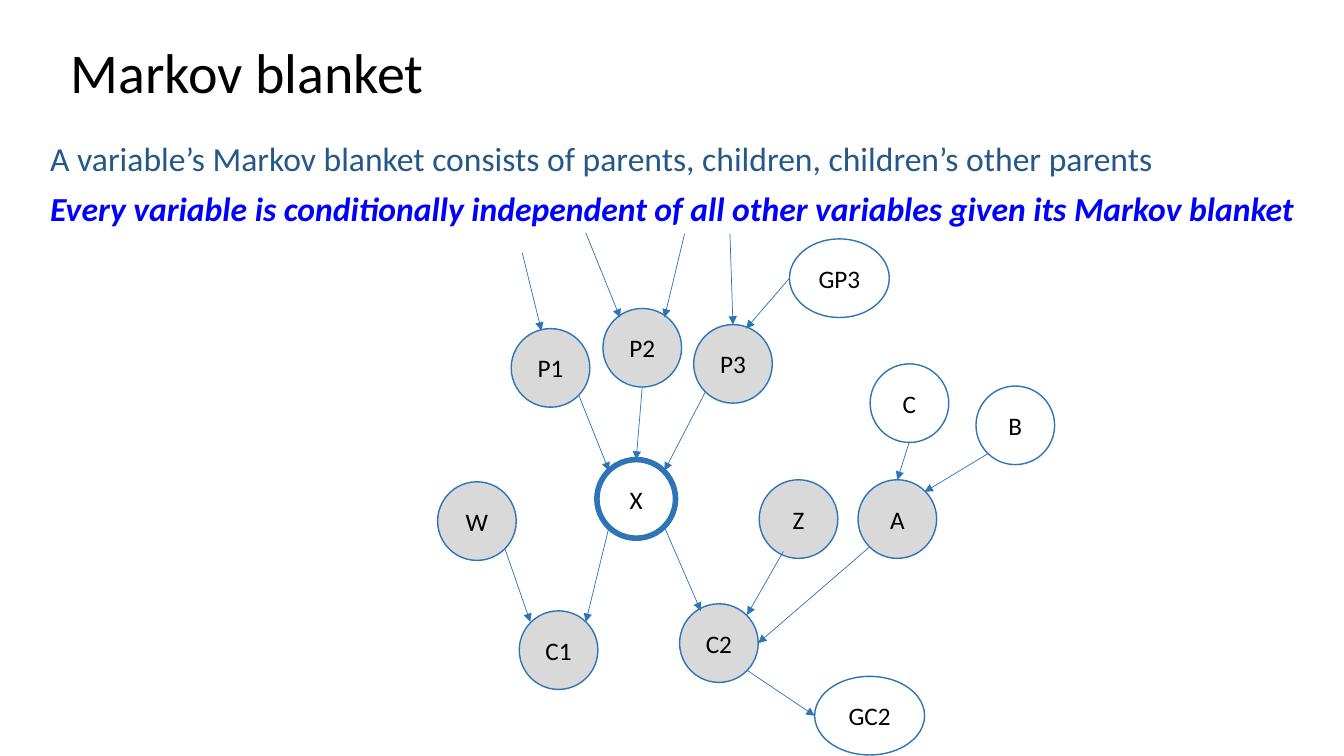
from dataclasses import dataclass

from lxml.etree import SubElement
from pptx import Presentation
from pptx.dml.color import RGBColor
from pptx.enum.shapes import MSO_CONNECTOR as Connector, MSO_SHAPE as Preset
from pptx.enum.text import MSO_ANCHOR as Anchor, PP_ALIGN as Align
from pptx.oxml.ns import qn
from pptx.slide import Slide
from pptx.text.text import _Paragraph as Paragraph
from pptx.util import Emu, Pt

EMU_PER_PX = 9144
DIAMETER = 78


@dataclass(frozen=True)
class Theme:
    font: str = "Calibri"
    ink: str = "000000"
    definition: str = "235888"
    emphasis: str = "0000FF"
    outline: str = "2E75B5"
    blanket: str = "D9D9D9"
    outside: str = "FFFFFF"
    title_size: int = 40
    statement_size: int = 24
    node_size: int = 18
    query_width: float = 4
    node_width: float = 1
    edge_width: float = 0.5


THEME = Theme()


@dataclass(frozen=True)
class Variable:
    label: str
    left: int
    top: int
    width: int = DIAMETER
    in_blanket: bool = False
    is_query: bool = False


@dataclass(frozen=True)
class Edge:
    x1: int
    y1: int
    x2: int
    y2: int


@dataclass(frozen=True)
class Statement:
    wording: str
    color: str
    stressed: bool = False


STATEMENTS = (
    Statement(
        "A variable’s Markov blanket consists of parents, children, children’s other parents",
        THEME.definition,
    ),
    Statement(
        "Every variable is conditionally independent of all other variables given its Markov blanket",
        THEME.emphasis,
        stressed=True,
    ),
)

VARIABLES = (
    Variable("X", 592, 456, is_query=True),
    Variable("P1", 507, 326, in_blanket=True),
    Variable("P2", 598, 306, in_blanket=True),
    Variable("P3", 688, 322, in_blanket=True),
    Variable("C1", 515, 606, in_blanket=True),
    Variable("C2", 674, 599, in_blanket=True),
    Variable("W", 434, 478, in_blanket=True),
    Variable("Z", 753, 476, in_blanket=True),
    Variable("A", 851, 476, in_blanket=True),
    Variable("B", 968, 383),
    Variable("C", 863, 361),
    Variable("GP3", 783, 237, width=99),
    Variable("GC2", 808, 671, width=109),
)

INTO_PARENTS = (
    Edge(518, 251, 537, 328),
    Edge(581, 231, 615, 315),
    Edge(679, 232, 659, 315),
    Edge(724, 232, 727, 322),
    Edge(783, 276, 740, 326),
)
PARENTS_TO_X = (
    Edge(574, 392, 604, 467),
    Edge(637, 384, 631, 456),
    Edge(700, 388, 659, 467),
)
INTO_CHILDREN = (
    Edge(604, 523, 581, 617),
    Edge(659, 523, 695, 606),
    Edge(501, 545, 526, 617),
    Edge(777, 547, 741, 610),
    Edge(862, 543, 752, 638),
)
BEYOND_BLANKET = (
    Edge(980, 450, 917, 488),
    Edge(902, 438, 890, 476),
    Edge(741, 665, 808, 710),
)


def px(length: int) -> Emu:
    return Emu(length * EMU_PER_PX)


def add_run(paragraph: Paragraph, wording: str, size: int, color: str, stressed: bool = False) -> None:
    run = paragraph.add_run()
    run.text = wording
    run.font.name = THEME.font
    run.font.size = Pt(size)
    run.font.color.rgb = RGBColor.from_string(color)
    run.font.bold = stressed
    run.font.italic = stressed


def set_title(slide: Slide, wording: str) -> None:
    title = slide.shapes.title
    title.left, title.top, title.width, title.height = map(px, (60, 40, 1150, 69))
    title.text_frame.vertical_anchor = Anchor.MIDDLE
    paragraph = title.text_frame.paragraphs[0]
    paragraph.alignment = Align.LEFT
    paragraph.line_spacing = 0.9
    add_run(paragraph, wording, THEME.title_size, THEME.ink)


def add_statements(slide: Slide, statements: tuple[Statement, ...]) -> None:
    frame = slide.shapes.add_textbox(px(40), px(136), px(1293), px(122)).text_frame
    frame.word_wrap = True
    for index, statement in enumerate(statements):
        paragraph = frame.add_paragraph() if index else frame.paragraphs[0]
        paragraph.line_spacing = 0.9
        paragraph.space_before = Pt(10)
        add_run(paragraph, statement.wording, THEME.statement_size, statement.color, statement.stressed)


def add_variable(slide: Slide, variable: Variable) -> None:
    node = slide.shapes.add_shape(
        Preset.OVAL, px(variable.left), px(variable.top), px(variable.width), px(DIAMETER)
    )
    node.shadow.inherit = False
    node.fill.solid()
    node.fill.fore_color.rgb = RGBColor.from_string(
        THEME.blanket if variable.in_blanket else THEME.outside
    )
    node.line.color.rgb = RGBColor.from_string(THEME.outline)
    node.line.width = Pt(THEME.query_width if variable.is_query else THEME.node_width)
    node.text_frame.vertical_anchor = Anchor.MIDDLE
    paragraph = node.text_frame.paragraphs[0]
    paragraph.alignment = Align.CENTER
    add_run(paragraph, variable.label, THEME.node_size, THEME.ink)


def add_edge(slide: Slide, edge: Edge) -> None:
    arrow = slide.shapes.add_connector(
        Connector.STRAIGHT, px(edge.x1), px(edge.y1), px(edge.x2), px(edge.y2)
    )
    arrow.line.color.rgb = RGBColor.from_string(THEME.outline)
    arrow.line.width = Pt(THEME.edge_width)
    properties = arrow._element.spPr
    SubElement(properties.find(qn("a:ln")), qn("a:tailEnd"), type="triangle")
    SubElement(properties, qn("a:effectLst"))


def main() -> None:
    deck = Presentation()
    deck.slide_width, deck.slide_height = px(1333), px(750)
    slide = deck.slides.add_slide(deck.slide_layouts.get_by_name("Title Only"))
    set_title(slide, "Markov blanket")
    add_statements(slide, STATEMENTS)
    for variable in VARIABLES:
        add_variable(slide, variable)
    for edge in INTO_PARENTS + PARENTS_TO_X + INTO_CHILDREN + BEYOND_BLANKET:
        add_edge(slide, edge)
    deck.save("out.pptx")


if __name__ == "__main__":
    main()
